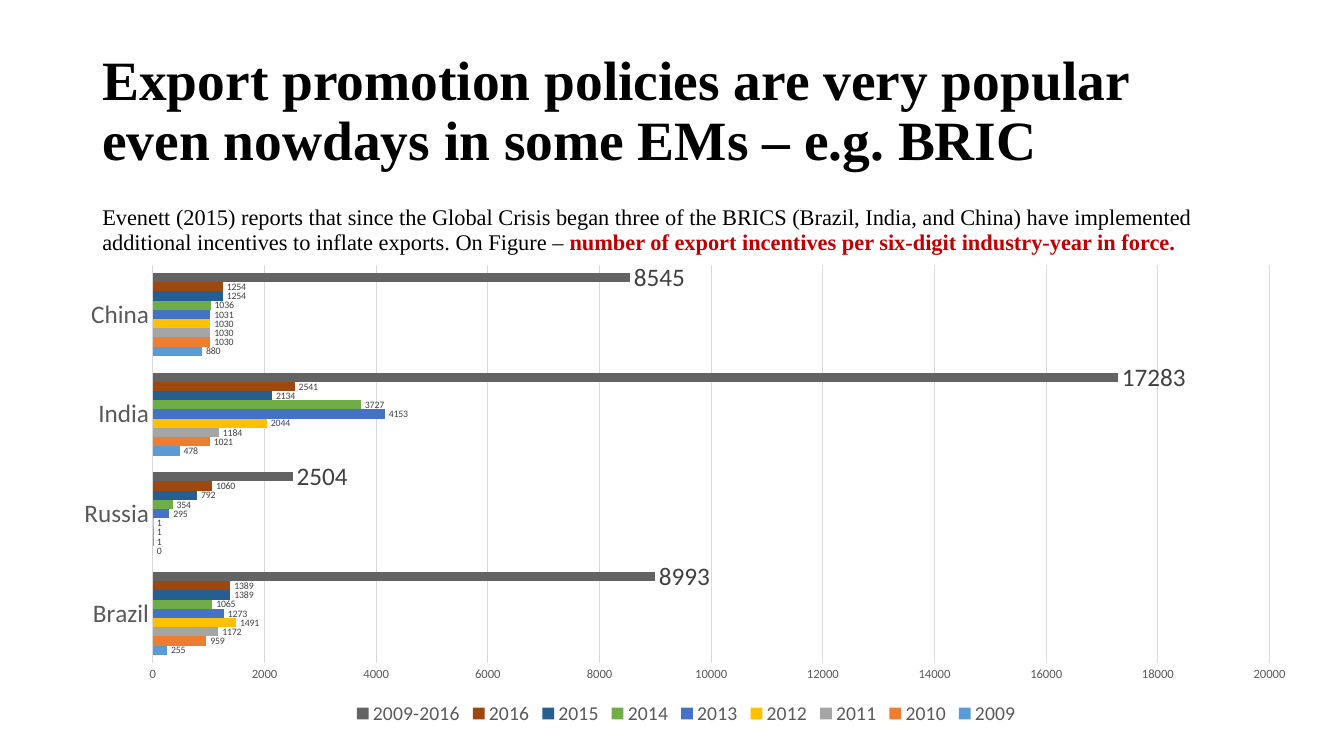
import dataclasses

import pptx
import pptx.chart.data
import pptx.dml.color
import pptx.enum.chart
import pptx.enum.text
import pptx.oxml
import pptx.oxml.ns
import pptx.util

EMU_PER_PX = 9525


@dataclasses.dataclass(frozen=True)
class Theme:
    heading_font: str = "Times New Roman"
    chart_font: str = "Calibri"
    ink: str = "000000"
    accent: str = "C00000"
    axis_text: str = "595959"
    label_text: str = "404040"
    grid: str = "D9D9D9"
    title_size: float = 39.6
    body_size: float = 16
    chart_size: float = 10
    country_size: float = 18
    scale_size: float = 9
    legend_size: float = 14
    year_label_size: float = 7
    total_label_size: float = 18


THEME = Theme()

COUNTRIES = ["Brazil", "Russia", "India", "China"]
TOTAL = "2009-2016"
INCENTIVES = [
    ("2009", "5B9BD5", [255, 0, 478, 880]),
    ("2010", "ED7D31", [959, 1, 1021, 1030]),
    ("2011", "A5A5A5", [1172, 1, 1184, 1030]),
    ("2012", "FFC000", [1491, 1, 2044, 1030]),
    ("2013", "4472C4", [1273, 295, 4153, 1031]),
    ("2014", "70AD47", [1065, 354, 3727, 1036]),
    ("2015", "255E91", [1389, 792, 2134, 1254]),
    ("2016", "9E480E", [1389, 1060, 2541, 1254]),
    (TOTAL, "636363", [8993, 2504, 17283, 8545]),
]
PLOT_AREA = {"x": 0.075, "y": 0.02, "w": 0.89, "h": 0.84}


def px(*lengths):
    return [pptx.util.Emu(length * EMU_PER_PX) for length in lengths]


def rgb(colour):
    return pptx.dml.color.RGBColor.from_string(colour)


def style_font(font, name, size, colour, bold=False):
    font.name = name
    font.size = pptx.util.Pt(size)
    font.color.rgb = rgb(colour)
    font.bold = bold


def add_paragraph_box(slide, box, anchor, size, runs):
    frame = slide.shapes.add_textbox(*px(*box)).text_frame
    frame.word_wrap = True
    frame.vertical_anchor = anchor
    paragraph = frame.paragraphs[0]
    paragraph.line_spacing = 0.9
    for wording, colour, bold in runs:
        run = paragraph.add_run()
        run.text = wording
        style_font(run.font, THEME.heading_font, size, colour, bold)


def style_axis(axis, size):
    axis.major_tick_mark = pptx.enum.chart.XL_TICK_MARK.NONE
    axis.minor_tick_mark = pptx.enum.chart.XL_TICK_MARK.NONE
    style_font(axis.tick_labels.font, THEME.chart_font, size, THEME.axis_text)


def style_line(line):
    line.color.rgb = rgb(THEME.grid)
    line.width = pptx.util.Pt(0.75)


def style_series(series, colour):
    series.format.fill.solid()
    series.format.fill.fore_color.rgb = rgb(colour)
    series.invert_if_negative = False
    labels = series.data_labels
    labels.show_value = True
    labels.number_format = "0"
    labels.number_format_is_linked = False
    labels.position = pptx.enum.chart.XL_LABEL_POSITION.OUTSIDE_END
    size = THEME.total_label_size if series.name == TOTAL else THEME.year_label_size
    style_font(labels.font, THEME.chart_font, size, THEME.label_text)


def place_plot(chart):
    plot_area = chart._chartSpace.chart.plotArea
    for old_layout in plot_area.findall(pptx.oxml.ns.qn("c:layout")):
        plot_area.remove(old_layout)
    modes = '<c:xMode val="edge"/><c:yMode val="edge"/>'
    sides = "".join(f'<c:{side} val="{share}"/>' for side, share in PLOT_AREA.items())
    plot_area.insert(0, pptx.oxml.parse_xml(
        f'<c:layout {pptx.oxml.ns.nsdecls("c")}><c:manualLayout>'
        f'<c:layoutTarget val="inner"/>{modes}{sides}</c:manualLayout></c:layout>'))


def add_incentives_chart(slide, box):
    figures = pptx.chart.data.CategoryChartData(number_format="0")
    figures.categories = COUNTRIES
    for year, _, counts in INCENTIVES:
        figures.add_series(year, counts)
    chart = slide.shapes.add_chart(
        pptx.enum.chart.XL_CHART_TYPE.BAR_CLUSTERED, *px(*box), figures).chart
    style_font(chart.font, THEME.chart_font, THEME.chart_size, THEME.ink)
    chart.has_title = False

    chart.has_legend = True
    chart.legend.position = pptx.enum.chart.XL_LEGEND_POSITION.BOTTOM
    chart.legend.include_in_layout = False
    style_font(chart.legend.font, THEME.chart_font, THEME.legend_size, THEME.axis_text)

    style_axis(chart.category_axis, THEME.country_size)
    style_line(chart.category_axis.format.line)

    scale = chart.value_axis
    style_axis(scale, THEME.scale_size)
    scale.minimum_scale, scale.maximum_scale, scale.major_unit = 0, 20000, 2000
    scale.tick_labels.number_format = "0"
    scale.tick_labels.number_format_is_linked = False
    scale.format.line.fill.background()
    scale.has_major_gridlines = True
    style_line(scale.major_gridlines.format.line)

    bars = chart.plots[0]
    bars.gap_width = 182
    bars.overlap = 0
    bars.vary_by_categories = False
    for series, (_, colour, _) in zip(bars.series, INCENTIVES):
        style_series(series, colour)
    place_plot(chart)


def main():
    deck = pptx.Presentation()
    deck.slide_width, deck.slide_height = px(1280, 720)
    slide = deck.slides.add_slide(deck.slide_layouts[6])
    add_paragraph_box(
        slide, (88, 38, 1104, 139), pptx.enum.text.MSO_ANCHOR.MIDDLE, THEME.title_size,
        [("Export promotion policies are very popular even nowdays in some EMs – e.g. BRIC",
          THEME.ink, True)])
    add_paragraph_box(
        slide, (88, 192, 1104, 457), pptx.enum.text.MSO_ANCHOR.TOP, THEME.body_size,
        [("Evenett (2015) reports that since the Global Crisis began three of the BRICS "
          "(Brazil, India, and China) have implemented additional incentives to inflate "
          "exports. On Figure – ", THEME.ink, False),
         ("number of export incentives per six-digit industry-year in force.",
          THEME.accent, True)])
    add_incentives_chart(slide, (56, 243, 1195, 452))
    deck.save("out.pptx")


if __name__ == "__main__":
    main()
